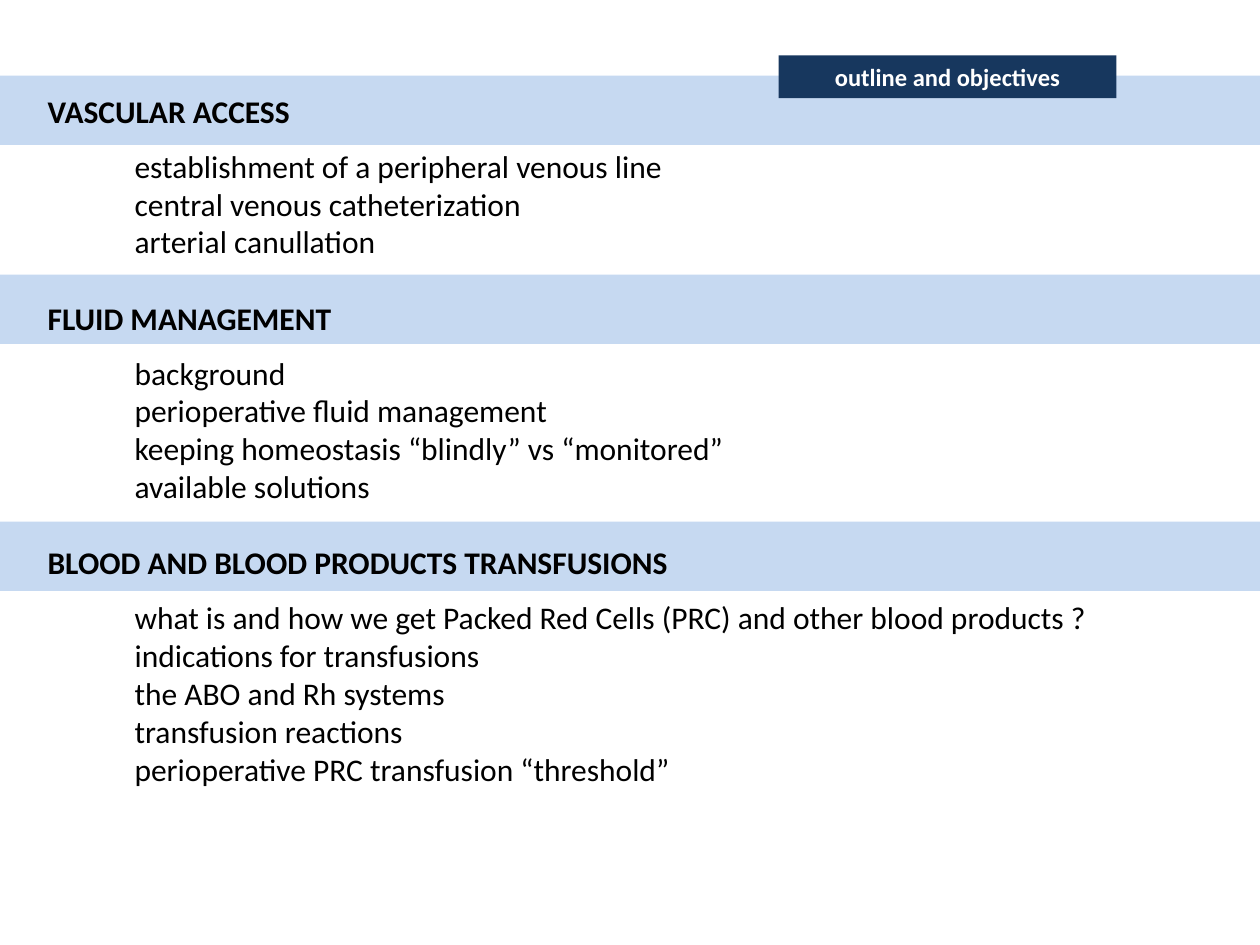
from pptx import Presentation
from pptx.dml.color import RGBColor
from pptx.enum.shapes import MSO_SHAPE
from pptx.enum.text import MSO_ANCHOR, MSO_AUTO_SIZE, PP_ALIGN
from pptx.util import Inches, Pt

RECT = MSO_SHAPE.RECTANGLE
MIDDLE = MSO_ANCHOR.MIDDLE
FIT = MSO_AUTO_SIZE.SHAPE_TO_FIT_TEXT
LEFT, CENTER = PP_ALIGN.LEFT, PP_ALIGN.CENTER

SECTIONS = [
    (0.6, "VASCULAR ACCESS", [
        "establishment of a peripheral venous line",
        "central venous catheterization",
        "arterial canullation",
    ]),
    (2.18, "FLUID MANAGEMENT", [
        "background",
        "perioperative fluid management",
        "keeping homeostasis “blindly” vs “monitored”",
        "available solutions",
    ]),
    (4.14, "BLOOD AND BLOOD PRODUCTS TRANSFUSIONS", [
        "what is and how we get Packed Red Cells (PRC) and other blood products ?",
        "indications for transfusions",
        "the ABO and Rh systems",
        "transfusion reactions",
        "perioperative PRC transfusion “threshold”",
    ]),
]
HEADING = {"name": "Calibri", "size": Pt(18), "bold": True}
ITEM = {"name": "Calibri", "size": Pt(18), "bold": False}
LABEL = {"name": "Calibri", "size": Pt(14), "bold": True}


def add_bar(left, top, width, height, color):
    sp = s.shapes.add_shape(RECT, Inches(left), Inches(top), Inches(width), Inches(height))
    sp.shadow.inherit = False
    sp.fill.solid()
    sp.fill.fore_color.rgb = RGBColor.from_string(color)
    sp.line.fill.background()
    return sp


def write(p, text, style, color, align=LEFT):
    p.alignment = align
    r = p.add_run()
    r.text = text
    for key, value in style.items():
        setattr(r.font, key, value)
    r.font.color.rgb = RGBColor.from_string(color)


prs = Presentation()
prs.slide_width = Inches(10)
prs.slide_height = Inches(7.5)
s = prs.slides.add_slide(prs.slide_layouts[6])

for top, heading, items in SECTIONS:
    add_bar(0, top, 10, 0.55, "C6D9F1")

outline = s.shapes.add_textbox(Inches(0.28), Inches(0.68), Inches(9.53), Inches(5.82))
tf = outline.text_frame
tf.word_wrap = True
tf.auto_size = FIT
for i, (top, heading, items) in enumerate(SECTIONS):
    p = tf.add_paragraph() if i else tf.paragraphs[0]
    if i:
        p.space_before = Pt(22)
    write(p, heading, HEADING, "000000")
    for j, item in enumerate(items):
        p = tf.add_paragraph()
        p.space_before = Pt(0 if j else 9.8)
        pPr = p._p.get_or_add_pPr()
        pPr.set("marL", str(Inches(0.69)))
        pPr.set("indent", "0")
        write(p, item, ITEM, "000000")

label = add_bar(6.18, 0.44, 2.68, 0.34, "17375E")
tf = label.text_frame
tf.word_wrap = True
tf.auto_size = FIT
tf.vertical_anchor = MIDDLE
write(tf.paragraphs[0], "outline and objectives", LABEL, "FFFFFF", CENTER)

prs.save("out.pptx")
